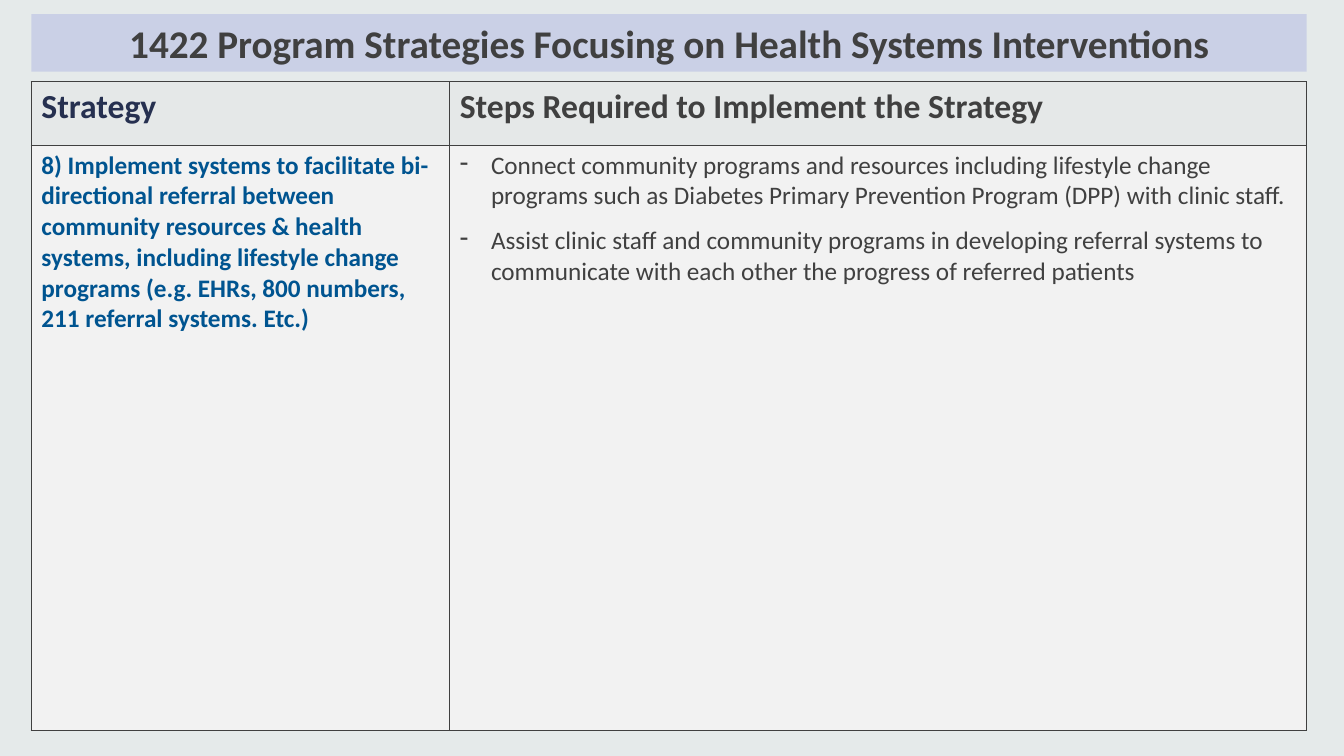
from lxml import etree
from pptx import Presentation
from pptx import util as u
from pptx.dml.color import RGBColor
from pptx.enum import text
from pptx.oxml import ns

COLORS = {
    "background": "E5EAEA",
    "banner": "CAD0E6",
    "header": "E5E8E8",
    "body": "F2F2F2",
    "ink": "404040",
    "navy": "263050",
    "blue": "005490",
}

# Percent of the slide's width (margin, columns) or height (the rest)
MARGIN = 2.33
COLUMNS = [31.13, 63.77]
ROWS = [8.4, 77.47]
BANNER_TOP, BANNER_HEIGHT = 1.87, 7.6
TABLE_TOP = 10.8

STEPS = [
    "Connect community programs and resources including lifestyle change programs "
    "such as Diabetes Primary Prevention Program (DPP) with clinic staff.",
    "Assist clinic staff and community programs in developing referral systems to "
    "communicate with each other the progress of referred patients",
]
STRATEGY = (
    "8) Implement systems to facilitate bi-directional referral between community "
    "resources & health systems, including lifestyle change programs "
    "(e.g. EHRs, 800 numbers, 211 referral systems. Etc.)"
)


class StrategySlide:
    font = "Calibri"

    def __init__(self, deck):
        self.width, self.height = deck.slide_width, deck.slide_height
        self.slide = deck.slides.add_slide(deck.slide_layouts[5])
        self.paint(self.slide.background.fill, "background")

    def across(self, percent):
        return u.Emu(round(self.width * percent / 100))

    def down(self, percent):
        return u.Emu(round(self.height * percent / 100))

    def paint(self, fill, color):
        fill.solid()
        fill.fore_color.rgb = RGBColor.from_string(COLORS[color])

    def add_words(self, paragraph, words, size, color, bold=True):
        run = paragraph.add_run()
        run.text = words
        run.font.name, run.font.size, run.font.bold = self.font, u.Pt(size), bold
        run.font.color.rgb = RGBColor.from_string(COLORS[color])

    def title(self, words):
        banner = self.slide.shapes.title
        banner.left, banner.top = self.across(MARGIN), self.down(BANNER_TOP)
        banner.width, banner.height = self.across(sum(COLUMNS)), self.down(BANNER_HEIGHT)
        self.paint(banner.fill, "banner")
        frame = banner.text_frame
        frame.auto_size = text.MSO_AUTO_SIZE.NONE
        frame.word_wrap = True
        frame.vertical_anchor = text.MSO_ANCHOR.MIDDLE
        frame.paragraphs[0].alignment = text.PP_ALIGN.CENTER
        self.add_words(frame.paragraphs[0], words, 28, "ink")

    def table(self):
        grid = self.slide.shapes.add_table(
            len(ROWS), len(COLUMNS), self.across(MARGIN), self.down(TABLE_TOP),
            self.across(sum(COLUMNS)), self.down(sum(ROWS))).table
        grid.first_row = grid.horz_banding = False
        for column, share in zip(grid.columns, COLUMNS):
            column.width = self.across(share)
        for row, share, color in zip(grid.rows, ROWS, ("header", "body")):
            row.height = self.down(share)
            for cell in row.cells:
                self.border(cell)
                self.paint(cell.fill, color)
        return grid

    def border(self, cell):
        properties = cell._tc.get_or_add_tcPr()
        for side in ("a:lnL", "a:lnR", "a:lnT", "a:lnB"):
            line = etree.SubElement(properties, ns.qn(side), w=str(u.Pt(1)))
            fill = etree.SubElement(line, ns.qn("a:solidFill"))
            etree.SubElement(fill, ns.qn("a:srgbClr"), val=COLORS["ink"])

    def dashes(self, cell, items, size, color):
        """Fill the cell with a dash-bulleted list."""
        frame = cell.text_frame
        indent = u.Inches(0.31)
        for number, item in enumerate(items):
            paragraph = frame.add_paragraph() if number else frame.paragraphs[0]
            paragraph.space_before = u.Pt(9.75 if number else 0)
            properties = paragraph._p.get_or_add_pPr()
            properties.set("marL", str(indent))
            properties.set("indent", str(-indent))
            etree.SubElement(properties, ns.qn("a:buChar"), char="-")
            self.add_words(paragraph, item, size, color, bold=False)


def main():
    deck = Presentation()
    deck.slide_width, deck.slide_height = u.Inches(13.33), u.Inches(7.5)
    page = StrategySlide(deck)
    page.title("1422 Program Strategies Focusing on Health Systems Interventions")
    grid = page.table()
    for row, column, words, size, color in (
        (0, 0, "Strategy", 24, "navy"),
        (0, 1, "Steps Required to Implement the Strategy", 24, "ink"),
        (1, 0, STRATEGY, 18, "blue"),
    ):
        page.add_words(grid.cell(row, column).text_frame.paragraphs[0], words, size, color)
    page.dashes(grid.cell(1, 1), STEPS, 18, "ink")
    deck.save("out.pptx")


if __name__ == "__main__":
    main()
